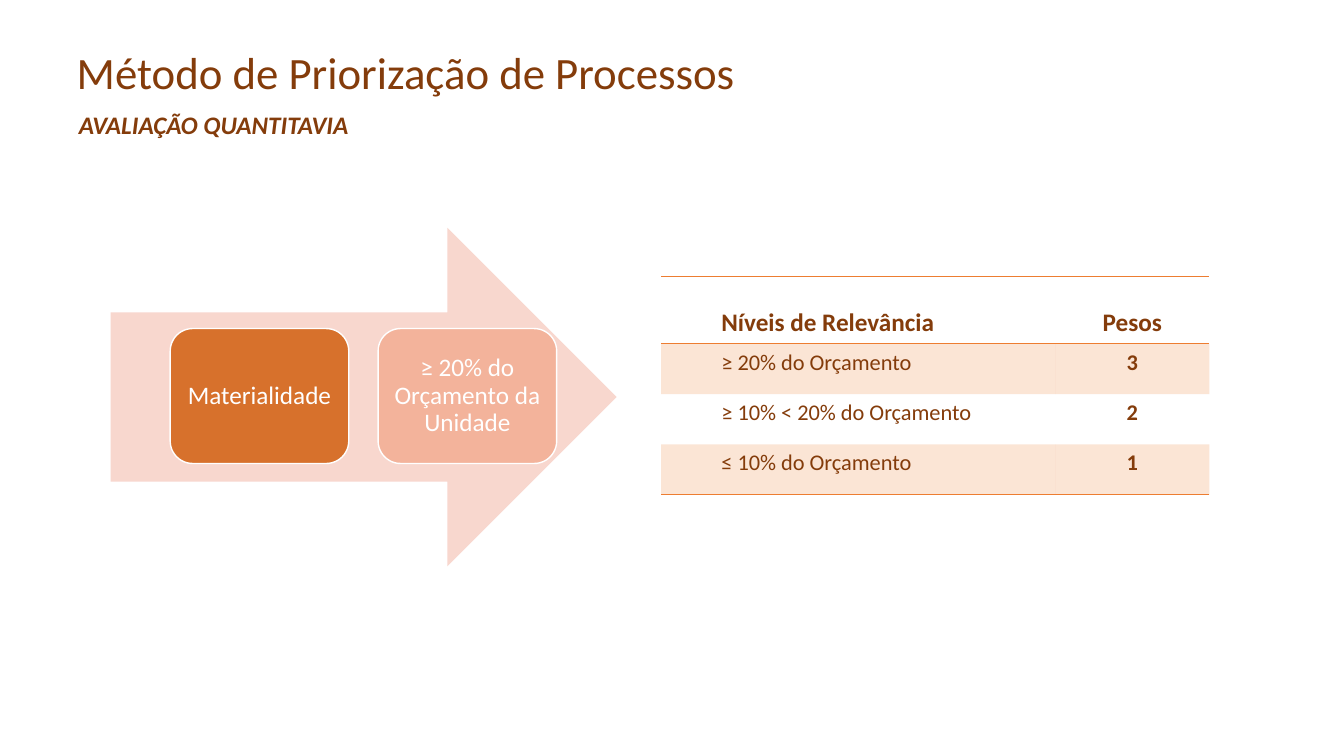
from dataclasses import dataclass

from lxml.etree import SubElement
from pptx import Presentation
from pptx.dml.color import RGBColor
from pptx.enum.shapes import MSO_SHAPE as Shape
from pptx.enum.text import MSO_ANCHOR as Anchor, PP_ALIGN as Align
from pptx.oxml import parse_xml
from pptx.oxml.ns import nsdecls, qn
from pptx.util import Cm, Pt

PLAIN_TABLE_STYLE = "{2D5ABB26-0587-4C30-8999-92F81FD0307C}"


@dataclass(frozen=True)
class Theme:
    font: str = "Calibri"
    brown: str = "843C0B"
    accent: str = "ED7D31"
    arrow: str = "F8D7CE"
    criterion: str = "D7712C"
    threshold: str = "F3B39B"
    white: str = "FFFFFF"
    title_size: int = 32
    label_size: int = 18
    body_size: int = 16
    band_opacity: int = 20


class SlideBuilder:
    def __init__(self, presentation, theme):
        self.theme = theme
        self.slide = presentation.slides.add_slide(presentation.slide_layouts[5])

    def set_text(self, frame, text, size, color, align=Align.LEFT, **formats):
        frame.word_wrap = True
        paragraph = frame.paragraphs[0]
        paragraph.text = text
        paragraph.alignment = align
        formats = {"name": self.theme.font, "size": Pt(size), **formats}
        for name, value in formats.items():
            setattr(paragraph.font, name, value)
        paragraph.font.color.rgb = RGBColor.from_string(color)
        return paragraph

    def title(self, text, left, top, width, height):
        title = self.slide.shapes.title
        box = {"left": left, "top": top, "width": width, "height": height}
        for name, value in box.items():
            setattr(title, name, Cm(value))
        title.text_frame.vertical_anchor = Anchor.TOP
        self.set_text(title.text_frame, text, self.theme.title_size, self.theme.brown)

    def subtitle(self, text, *box):
        textbox = self.slide.shapes.add_textbox(*map(Cm, box))
        self.set_text(textbox.text_frame, text, self.theme.label_size,
                      self.theme.brown, Align.CENTER, bold=True, italic=True)

    def shape(self, kind, fill, *box):
        shape = self.slide.shapes.add_shape(kind, *map(Cm, box))
        shape.shadow.inherit = False
        shape.fill.solid()
        shape.fill.fore_color.rgb = RGBColor.from_string(fill)
        shape.line.fill.background()
        return shape

    def card(self, text, fill, *box):
        card = self.shape(Shape.ROUNDED_RECTANGLE, fill, *box)
        card.line.color.rgb = RGBColor.from_string(self.theme.white)
        card.line.width = Pt(1)
        frame = card.text_frame
        frame.vertical_anchor = Anchor.MIDDLE
        for side in ("left", "top", "right", "bottom"):
            setattr(frame, f"margin_{side}", Cm(0.18))
        paragraph = self.set_text(frame, text, self.theme.label_size,
                                  self.theme.white, Align.CENTER)
        paragraph.line_spacing = 0.9

    def table(self, rows, left, top, widths, heights):
        frame = self.slide.shapes.add_table(
            len(rows), len(widths), Cm(left), Cm(top), Cm(sum(widths)), Cm(sum(heights)))
        table = frame.table
        table.first_row = table.horz_banding = False
        table._tbl.tblPr.find(qn("a:tableStyleId")).text = PLAIN_TABLE_STYLE
        for column, width in zip(table.columns, widths):
            column.width = Cm(width)
        for index, (values, height) in enumerate(zip(rows, heights)):
            table.rows[index].height = Cm(height)
            header, last = index == 0, index == len(rows) - 1
            sides = ["lnT", "lnB"] if header else ["lnB"] if last else []
            for column, value in enumerate(values):
                cell = table.cell(index, column)
                cell.vertical_anchor = Anchor.BOTTOM if header else Anchor.TOP
                if column == 0:
                    cell.margin_left = Cm(1.52)
                self.set_text(cell.text_frame, value,
                              self.theme.label_size if header else self.theme.body_size,
                              self.theme.brown, Align.CENTER if column else Align.LEFT,
                              bold=header or column > 0)
                self.band(cell, index % 2 == 1)
                self.borders(cell, sides)

    def band(self, cell, tinted):
        if not tinted:
            cell.fill.background()
            return
        cell.fill.solid()
        cell.fill.fore_color.rgb = RGBColor.from_string(self.theme.accent)
        color = cell._tc.tcPr.find(".//" + qn("a:srgbClr"))
        SubElement(color, qn("a:alpha"), val=str(self.theme.band_opacity * 1000))

    def borders(self, cell, sides):
        for position, side in enumerate(sides):
            cell._tc.tcPr.insert(position, parse_xml(
                f'<a:{side} {nsdecls("a")} w="{Pt(1)}"><a:solidFill>'
                f'<a:srgbClr val="{self.theme.accent}"/></a:solidFill></a:{side}>'))


def main():
    presentation = Presentation()
    presentation.slide_width, presentation.slide_height = Cm(33.87), Cm(19.05)
    theme = Theme()
    builder = SlideBuilder(presentation, theme)

    builder.title("Método de Priorização de Processos", 1.68, 0.99, 26.82, 1.63)
    builder.subtitle("AVALIAÇÃO QUANTITAVIA", -0.51, 2.62, 11.79, 1.02)

    builder.shape(Shape.RIGHT_ARROW, theme.arrow, 2.79, 5.74, 12.75, 8.53)
    cards = [("Materialidade", theme.criterion),
             ("≥ 20% do Orçamento da Unidade", theme.threshold)]
    for index, (text, fill) in enumerate(cards):
        builder.card(text, fill, 4.29 + index * 5.24, 8.28, 4.5, 3.4)

    rows = [("Níveis de Relevância", "Pesos"),
            ("≥ 20% do Orçamento", "3"),
            ("≥ 10% < 20% do Orçamento", "2"),
            ("≤ 10% do Orçamento", "1")]
    builder.table(rows, 16.66, 6.96, [9.93, 3.89], [1.7] + [1.27] * 3)

    presentation.save("out.pptx")


if __name__ == "__main__":
    main()
